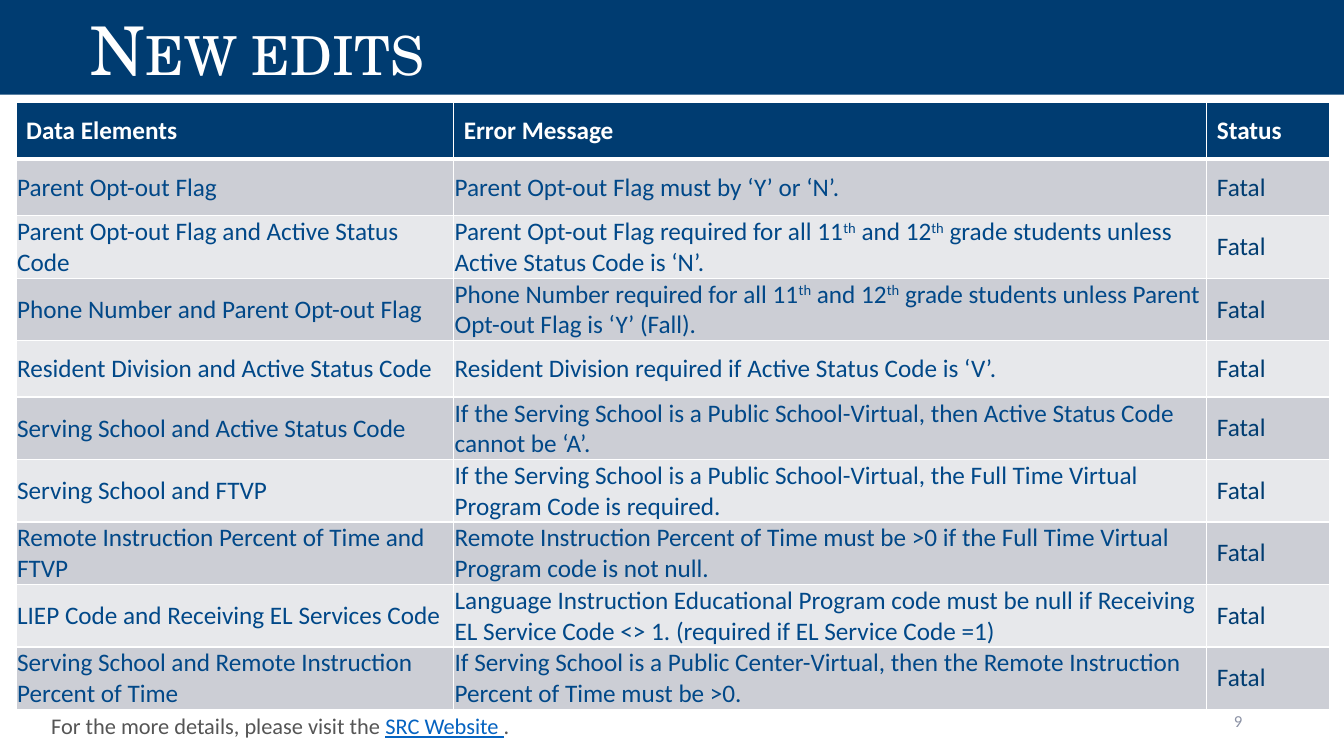
"""Build the "New edits" slide: title band, table of edits and footer."""
import pptx
import pptx.dml.color
import pptx.enum.text
import pptx.oxml
import pptx.oxml.ns
import pptx.util

Inches, Pt = pptx.util.Inches, pptx.util.Pt
PP_ALIGN, MSO_ANCHOR = pptx.enum.text.PP_ALIGN, pptx.enum.text.MSO_ANCHOR
NAVY, BLUE, WHITE = "003C71", "014888", "FFFFFF"
BANDS = ["CCCED5", "E7E8EB"]


def rgb(value):
    return pptx.dml.color.RGBColor.from_string(value)


def style(font, size, color, name="Calibri"):
    font.name, font.size = name, Pt(size)
    font.color.rgb = rgb(color)


prs = pptx.Presentation()
prs.slide_width, prs.slide_height = Inches(13.33), Inches(7.5)
s = prs.slides.add_slide(prs.slide_layouts[6])

sp = s.shapes.add_shape(1, 0, 0, prs.slide_width, Inches(0.94))
sp.shadow.inherit = False
sp.fill.solid()
sp.fill.fore_color.rgb = rgb(NAVY)
sp.line.fill.background()
tf = sp.text_frame
tf.word_wrap = True
tf.vertical_anchor = MSO_ANCHOR.BOTTOM
tf.margin_left = Inches(0.9)
p = tf.paragraphs[0]
p.alignment, p.line_spacing = PP_ALIGN.LEFT, 0.9
r = p.add_run()
r.text = "New edits"
style(r.font, 48, WHITE, "TeX Gyre Schola")
r.font._element.set("cap", "small")

sp = s.shapes.add_textbox(Inches(9.42), Inches(6.95), Inches(3), Inches(0.4))
tf = sp.text_frame
tf.word_wrap = True
tf.vertical_anchor = MSO_ANCHOR.MIDDLE
p = tf.paragraphs[0]
p.text, p.alignment = "9", PP_ALIGN.RIGHT
style(p.font, 12, "8C92A5")

sp = s.shapes.add_textbox(Inches(0.41), Inches(6.98), Inches(8), Inches(0.42))
tf = sp.text_frame
tf.word_wrap = True
p = tf.paragraphs[0]
p.line_spacing = 1.15
for text, color, underline in [
    ("For the more details, please visit the ", "555555", False),
    ("SRC Website ", "0563C1", True),
    (".", "555555", False),
]:
    r = p.add_run()
    r.text = text
    style(r.font, 16, color)
    r.font.underline = underline

# ^ marks the start and end of superscript text
rows = [
    ("Data Elements", "Error Message", "Status"),
    ("Parent Opt-out Flag", "Parent Opt-out Flag must by ‘Y’ or ‘N’."),
    ("Parent Opt-out Flag and Active Status Code",
     "Parent Opt-out Flag required for all 11^th^ and 12^th^ grade students unless "
     "Active Status Code is ‘N’."),
    ("Phone Number and Parent Opt-out Flag",
     "Phone Number required for all 11^th^ and 12^th^ grade students unless "
     "Parent Opt-out Flag is ‘Y’ (Fall)."),
    ("Resident Division and Active Status Code",
     "Resident Division required if Active Status Code is ‘V’."),
    ("Serving School and Active Status Code",
     "If the Serving School is a Public School-Virtual, then Active Status Code "
     "cannot be ‘A’."),
    ("Serving School and FTVP",
     "If the Serving School is a Public School-Virtual, the Full Time Virtual "
     "Program Code is required."),
    ("Remote Instruction Percent of Time and FTVP",
     "Remote Instruction Percent of Time must be >0 if the Full Time Virtual "
     "Program code is not null."),
    ("LIEP Code and Receiving EL Services Code",
     "Language Instruction Educational Program code must be null if Receiving "
     "EL Service Code <> 1. (required if EL Service Code =1)"),
    ("Serving School and Remote Instruction Percent of Time",
     "If Serving School is a Public Center-Virtual, then the Remote Instruction "
     "Percent of Time must be >0."),
]
short_rows = (0, 1, 4)
table = s.shapes.add_table(len(rows), 3, Inches(0.16), Inches(1.02),
                           Inches(13.03), Inches(6.02)).table
for column, width in zip(table.columns, (4.34, 7.47, 1.22)):
    column.width = Inches(width)

for i, row in enumerate(rows):
    table.rows[i].height = Inches(0.56 if i in short_rows else 0.62)
    texts = row if i == 0 else row + ("Fatal",)
    for j, text in enumerate(texts):
        cell = table.cell(i, j)
        cell.fill.solid()
        cell.fill.fore_color.rgb = rgb(BANDS[(i - 1) % 2] if i else NAVY)
        cell.vertical_anchor = MSO_ANCHOR.MIDDLE
        if i and j < 2:
            cell.margin_left = cell.margin_right = cell.margin_top = Inches(0.01)
            cell.margin_bottom = 0
        p = cell.text_frame.paragraphs[0]
        style(p.font, 18, WHITE if i == 0 else BLUE if j < 2 else NAVY)
        p.font.bold = i == 0
        for k, part in enumerate(text.split("^")):
            r = p.add_run()
            r.text = part
            if k % 2:
                r.font._element.set("baseline", "30000")
        tcPr = cell._tc.get_or_add_tcPr()
        for k, side in enumerate("LRTB"):
            heavy = (i, side) in ((0, "B"), (1, "T"))
            tcPr.insert(k, pptx.oxml.parse_xml(
                f'<a:ln{side} {pptx.oxml.ns.nsdecls("a")} w="{Pt(3 if heavy else 1)}">'
                f'<a:solidFill><a:srgbClr val="{WHITE}"/></a:solidFill></a:ln{side}>'))

prs.save("out.pptx")
